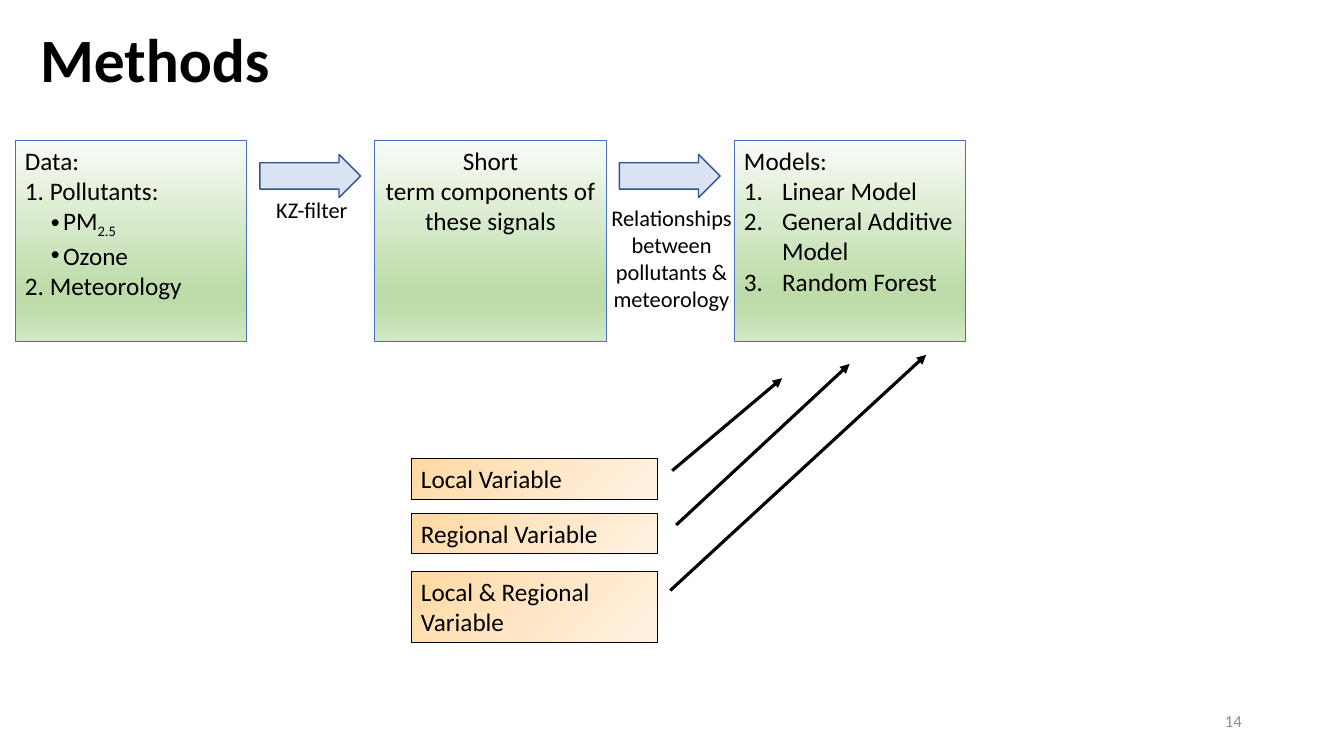
from lxml.etree import SubElement
from pptx import Presentation
from pptx.dml.color import RGBColor
from pptx.enum.shapes import MSO_CONNECTOR, MSO_SHAPE
from pptx.enum.text import MSO_ANCHOR, MSO_AUTO_SIZE, PP_ALIGN
from pptx.oxml.ns import qn
from pptx.util import Cm, Pt

COLORS = {
    "text": "000000", "number": "8C8C8C", "box_line": "4472C4",
    "arrow": "DAE3F3", "arrow_line": "325491",
}
GREEN = [(0, "F8FBF6"), (74, "BEDCAA"), (83, "BEDCAA"), (100, "D4E8C6")]
ORANGE = [(0, "FFD8A0"), (50, "FFE6C5"), (100, "FFF2E3")]
STEP = 9.06  # distance from one process box to the next, in cm


def rgb(name):
    return RGBColor.from_string(COLORS[name])


class SlideBuilder:
    font = "Calibri"

    def __init__(self, slide):
        self.slide = slide

    def add_text(self, shape, lines, size=18, color="text", bold=False,
                 align=PP_ALIGN.LEFT, anchor=MSO_ANCHOR.TOP, grow=False):
        """Fill a shape with (text, bullet) lines; "_" starts a subscript."""
        frame = shape.text_frame
        frame.word_wrap = True
        frame.vertical_anchor = anchor
        frame.auto_size = MSO_AUTO_SIZE.SHAPE_TO_FIT_TEXT if grow else MSO_AUTO_SIZE.NONE
        for index, (text, bullet) in enumerate(lines):
            paragraph = frame.add_paragraph() if index else frame.paragraphs[0]
            paragraph.alignment = align
            if bullet:
                self.set_bullet(paragraph, bullet)
            for row, part in enumerate(text.split("\n")):
                if row:
                    paragraph.add_line_break()
                for level, piece in enumerate(part.split("_")):
                    run = paragraph.add_run()
                    run.text = piece
                    run.font.name = self.font
                    run.font.size = Pt(size)
                    run.font.bold = bold
                    run.font.color.rgb = rgb(color)
                    if level:
                        run.font._element.set("baseline", "-25000")
        return frame

    def set_bullet(self, paragraph, bullet):
        properties = paragraph._p.get_or_add_pPr()
        properties.set("marL", str(Cm(0.96)))
        if bullet == "number":
            properties.set("indent", str(-Cm(0.96)))
            SubElement(properties, qn("a:buAutoNum"), type="arabicPeriod")
        else:
            paragraph.level = 1
            properties.set("indent", str(-Cm(0.31)))
            SubElement(properties, qn("a:buFont"), typeface="Arial")
            SubElement(properties, qn("a:buChar"), char=bullet)

    def text_box(self, left, top, width, height, text, **style):
        shape = self.slide.shapes.add_textbox(Cm(left), Cm(top), Cm(width), Cm(height))
        return self.add_text(shape, [(text, None)], **style)

    def outlined_shape(self, kind, left, top, width, height, line, line_width):
        shape = self.slide.shapes.add_shape(kind, Cm(left), Cm(top), Cm(width), Cm(height))
        shape.shadow.inherit = False
        shape.line.color.rgb = rgb(line)
        shape.line.width = Pt(line_width)
        return shape

    def gradient_box(self, left, top, width, height, lines, stops, angle, line, **style):
        shape = self.outlined_shape(MSO_SHAPE.RECTANGLE, left, top, width, height, line, 0.75)
        shape.fill.gradient()
        shape.fill.gradient_angle = 360 - angle
        stop_list = shape._element.spPr.find(qn("a:gradFill")).find(qn("a:gsLst"))
        for old_stop in list(stop_list):
            stop_list.remove(old_stop)
        for position, color in stops:
            stop = SubElement(stop_list, qn("a:gs"), pos=str(position * 1000))
            SubElement(stop, qn("a:srgbClr"), val=color)
        self.add_text(shape, lines, **style)

    def block_arrow(self, left, top, width, height):
        shape = self.outlined_shape(MSO_SHAPE.RIGHT_ARROW, left, top, width, height,
                                    "arrow_line", 1)
        shape.adjustments[0] = 0.61
        shape.adjustments[1] = 0.5
        shape.fill.solid()
        shape.fill.fore_color.rgb = rgb("arrow")

    def line_arrow(self, start, end):
        connector = self.slide.shapes.add_connector(
            MSO_CONNECTOR.STRAIGHT, *(Cm(value) for value in start + end))
        connector.line.color.rgb = rgb("text")
        connector.line.width = Pt(2.25)
        SubElement(connector.line._get_or_add_ln(), qn("a:tailEnd"), type="triangle")
        SubElement(connector._element.spPr, qn("a:effectLst"))


def main():
    presentation = Presentation()
    presentation.slide_width, presentation.slide_height = Cm(33.87), Cm(19.05)
    builder = SlideBuilder(presentation.slides.add_slide(presentation.slide_layouts[6]))

    processes = [
        ([("Data:\n1. Pollutants:", None), ("PM_2.5", "•"), ("Ozone", "•"),
          ("2. Meteorology", None)], PP_ALIGN.LEFT),
        ([("Short term\u00a0components of these signals", None)], PP_ALIGN.CENTER),
        ([("Models:", None), ("Linear Model", "number"),
          ("General Additive Model", "number"), ("Random Forest", "number")],
         PP_ALIGN.LEFT),
    ]
    for index, (lines, align) in enumerate(processes):
        if index:
            builder.block_arrow(6.55 + (index - 1) * STEP, 3.89, 2.54, 1.09)
        builder.gradient_box(0.38 + index * STEP, 3.53, 5.84, 5.08, lines,
                             GREEN, 90, "box_line", align=align)

    caption = {"size": 16, "align": PP_ALIGN.CENTER, "grow": True}
    builder.text_box(6.22, 4.83, 3.28, 0.94, "KZ-filter", **caption)
    builder.text_box(14.88, 5.03, 4.09, 3,
                     "Relationships between pollutants & meteorology", **caption)
    title = builder.text_box(0.76, 0.61, 29.21, 3.68, "Methods", size=44, bold=True)
    title.paragraphs[0].line_spacing = 0.9

    variables = [
        ("Local Variable", 11.56, 1.02, (16.94, 11.86), (19.71, 9.53)),
        ("Regional Variable", 12.93, 1.02, (17.04, 13.23), (21.41, 9.17)),
        ("Local & Regional Variable", 14.4, 1.8, (16.89, 14.88), (23.34, 8.94)),
    ]
    for text, top, height, start, end in variables:
        builder.gradient_box(10.36, top, 6.2, height, [(text, None)],
                             ORANGE, 45, "text", grow=True)
        builder.line_arrow(start, end)

    builder.text_box(23.93, 17.65, 7.62, 1.02, "14", size=12, color="number",
                     align=PP_ALIGN.RIGHT, anchor=MSO_ANCHOR.MIDDLE)
    presentation.save("out.pptx")


if __name__ == "__main__":
    main()
